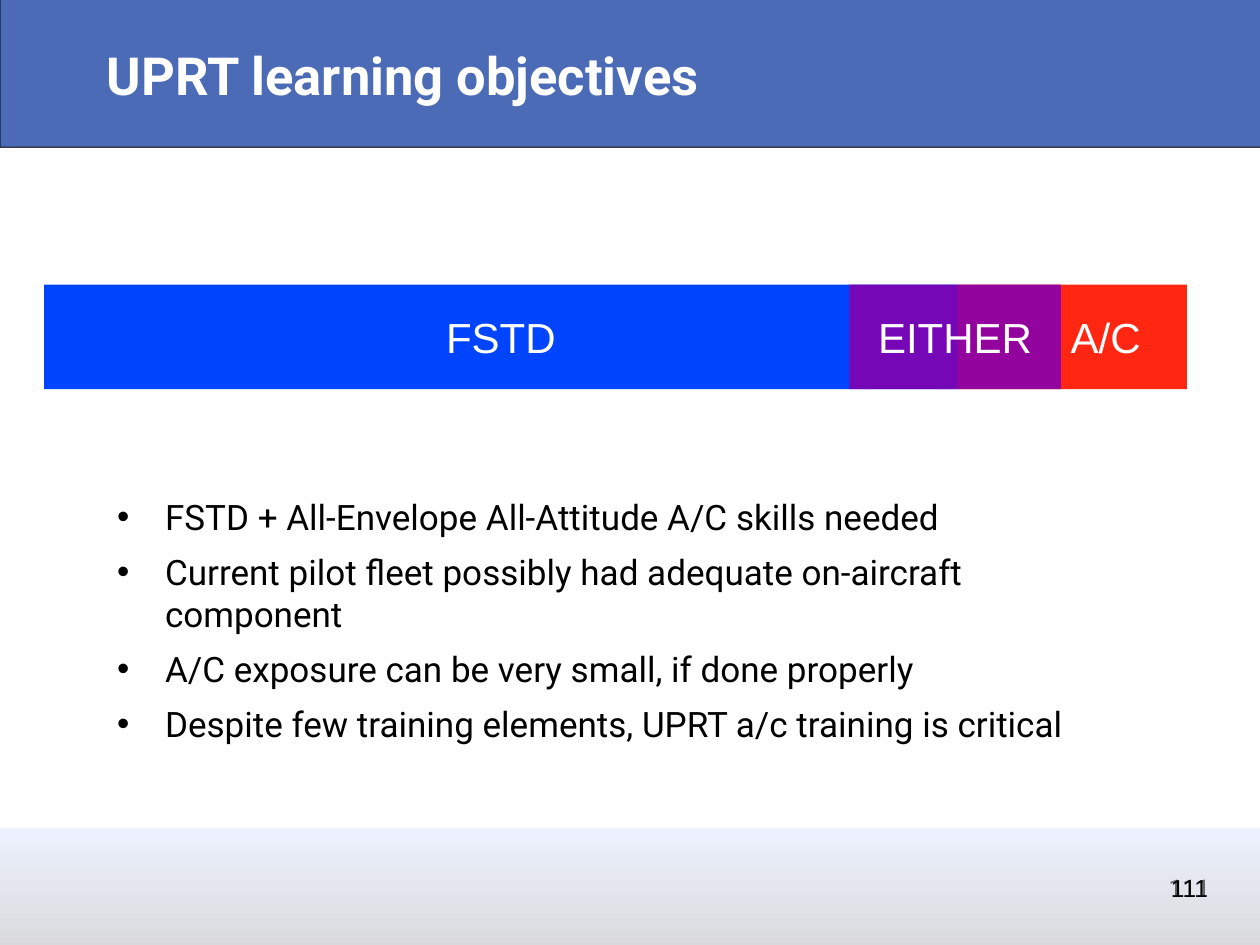
import dataclasses
from typing import Any

import pptx
import pptx.dml.color
import pptx.enum.shapes
import pptx.enum.text
import pptx.oxml.ns
import pptx.oxml.xmlchemy
import pptx.util
from pptx.util import Inches

ALIGN = pptx.enum.text.PP_ALIGN
ANCHOR = pptx.enum.text.MSO_ANCHOR


@dataclasses.dataclass(frozen=True)
class Theme:
    heading_font: str = "Roboto"
    label_font: str = "Arial"
    white: str = "FFFFFF"
    black: str = "000000"
    banner: str = "002D99"
    footer_top: str = "DCE6FF"
    footer_bottom: str = "B4B5BA"
    simulator: str = "0044FE"
    either: str = "8500AF"
    aircraft: str = "FF2712"
    title_size: float = 30
    label_size: float = 24
    body_size: float = 20
    number_size: float = 14


@dataclasses.dataclass(frozen=True)
class Box:
    left: float
    top: float
    width: float
    height: float

    def lengths(self) -> tuple:
        return tuple(Inches(value) for value in dataclasses.astuple(self))


@dataclasses.dataclass(frozen=True)
class Segment:
    label: str
    left: float
    width: float
    color: str
    opacity: int = 100
    left_inset: float = 0.04


THEME = Theme()
BAR_TOP, BAR_HEIGHT = 2.26, 0.83
SEGMENTS = (
    Segment("FSTD", 0.35, 7.25, THEME.simulator),
    Segment("A/C", 7.6, 1.82, THEME.aircraft, left_inset=0.57),
    Segment("EITHER", 6.74, 1.68, THEME.either, opacity=89),
)
OBJECTIVES = (
    "FSTD + All-Envelope All-Attitude A/C skills needed",
    "Current pilot fleet possibly had adequate on-aircraft component",
    "A/C exposure can be very small, if done properly",
    "Despite few training elements, UPRT a/c training is critical",
)
NUMBER_BOX = Box(9.27, 6.88, 0.34, 0.33)


def rgb(color: str) -> Any:
    return pptx.dml.color.RGBColor.from_string(color)


def set_opacity(shape: Any, percent: int) -> None:
    """Apply one opacity to every fill and line colour of the shape."""
    for color in shape._element.spPr.iter(pptx.oxml.ns.qn("a:srgbClr")):
        alpha = pptx.oxml.xmlchemy.OxmlElement("a:alpha")
        alpha.set("val", str(percent * 1000))
        color.append(alpha)


def add_rectangle(slide: Any, box: Box) -> Any:
    shape = slide.shapes.add_shape(
        pptx.enum.shapes.MSO_SHAPE.RECTANGLE, *box.lengths())
    shape.shadow.inherit = False
    shape.line.fill.background()
    return shape


def format_frame(frame: Any, insets: tuple, anchor: Any, wrap: bool = True) -> None:
    """Set the insets (left, top, right, bottom), anchor and wrapping."""
    left, top, right, bottom = map(Inches, insets)
    values = {
        "margin_left": left, "margin_top": top,
        "margin_right": right, "margin_bottom": bottom,
        "vertical_anchor": anchor, "word_wrap": wrap,
    }
    for name, value in values.items():
        setattr(frame, name, value)


def write(paragraph: Any, text: str, font: str, size: float, color: str,
          bold: bool = False, align: Any = ALIGN.LEFT) -> None:
    paragraph.alignment = align
    run = paragraph.add_run()
    run.text = text
    for name, value in {"name": font, "size": pptx.util.Pt(size), "bold": bold}.items():
        setattr(run.font, name, value)
    run.font.color.rgb = rgb(color)


def add_bullet(paragraph: Any) -> None:
    properties = paragraph._p.get_or_add_pPr()
    properties.set("marL", str(Inches(0.38)))
    properties.set("indent", str(Inches(-0.38)))
    bullet_font = pptx.oxml.xmlchemy.OxmlElement("a:buFont")
    bullet_font.set("typeface", THEME.label_font)
    bullet = pptx.oxml.xmlchemy.OxmlElement("a:buChar")
    bullet.set("char", "•")
    properties.extend((bullet_font, bullet))


def draw_footer(slide: Any) -> None:
    footer = add_rectangle(slide, Box(-0.1, 6.57, 10.15, 0.97))
    footer.fill.gradient()
    footer.fill.gradient_angle = 270
    colors = (THEME.footer_top, THEME.footer_bottom)
    for stop, color in zip(footer.fill.gradient_stops, colors):
        stop.color.rgb = rgb(color)
    set_opacity(footer, 50)


def draw_banner(slide: Any) -> None:
    banner = add_rectangle(slide, Box(0, -0.04, 10.01, 1.21))
    banner.fill.solid()
    banner.fill.fore_color.rgb = rgb(THEME.banner)
    banner.line.color.rgb = rgb(THEME.black)
    banner.line.width = pptx.util.Pt(0.75)
    set_opacity(banner, 70)

    title = slide.shapes.add_textbox(*Box(0.75, 0.17, 8.5, 0.85).lengths())
    format_frame(title.text_frame, (0.1, 0.06, 0.14, 0.06), ANCHOR.MIDDLE)
    write(title.text_frame.paragraphs[0], "UPRT learning objectives",
          THEME.heading_font, THEME.title_size, THEME.white, bold=True)


def draw_number(slide: Any, font: str) -> None:
    number = slide.shapes.add_textbox(*NUMBER_BOX.lengths())
    format_frame(number.text_frame, (0, 0.05, 0, 0.05), ANCHOR.TOP, wrap=False)
    write(number.text_frame.paragraphs[0], "111", font,
          THEME.number_size, THEME.black, align=ALIGN.CENTER)


def draw_segment(slide: Any, segment: Segment) -> None:
    shape = add_rectangle(
        slide, Box(segment.left, BAR_TOP, segment.width, BAR_HEIGHT))
    shape.fill.solid()
    shape.fill.fore_color.rgb = rgb(segment.color)
    if segment.opacity < 100:
        set_opacity(shape, segment.opacity)
    format_frame(shape.text_frame, (segment.left_inset, 0, 0.04, 0), ANCHOR.MIDDLE)
    write(shape.text_frame.paragraphs[0], segment.label, THEME.label_font,
          THEME.label_size, THEME.white, align=ALIGN.CENTER)


def draw_objectives(slide: Any) -> None:
    frame = slide.shapes.add_textbox(*Box(0.93, 3.93, 8.12, 2.32).lengths()).text_frame
    format_frame(frame, (0, 0, 0.04, 0), ANCHOR.TOP)
    for index, text in enumerate(OBJECTIVES):
        paragraph = frame.add_paragraph() if index else frame.paragraphs[0]
        add_bullet(paragraph)
        if index:
            paragraph.space_before = pptx.util.Pt(7.4)
        write(paragraph, text, THEME.heading_font, THEME.body_size, THEME.black)


def main() -> None:
    presentation = pptx.Presentation()
    presentation.slide_width = Inches(10)
    presentation.slide_height = Inches(7.5)
    slide = presentation.slides.add_slide(presentation.slide_layouts[6])
    draw_number(slide, THEME.heading_font)
    draw_footer(slide)
    draw_banner(slide)
    draw_number(slide, THEME.label_font)
    for segment in SEGMENTS:
        draw_segment(slide, segment)
    draw_objectives(slide)
    presentation.save("out.pptx")


if __name__ == "__main__":
    main()
